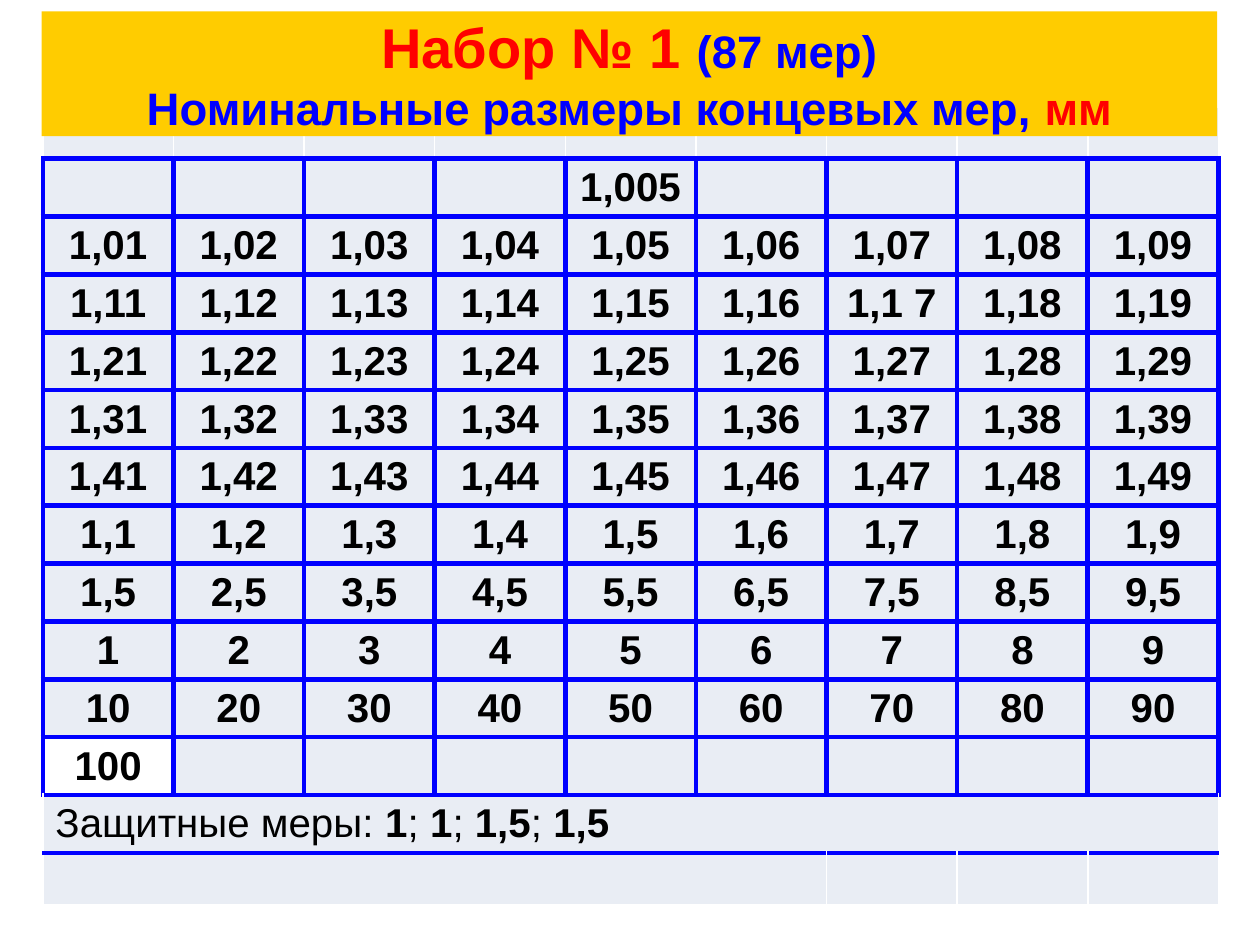
from lxml.etree import SubElement
from pptx import Presentation
from pptx.dml.color import RGBColor
from pptx.enum.text import MSO_ANCHOR, MSO_AUTO_SIZE, PP_ALIGN
from pptx.oxml.ns import qn
from pptx.util import Inches, Pt

BLUE, RED, GOLD = "0000FF", "FF0000", "FFCC00"
WHITE, BLACK, PALE = "FFFFFF", "000000", "E9EDF4"
COLS = 9


def color(code):
    return RGBColor.from_string(code)


class Board:
    face = "Arial"

    def __init__(self, slide):
        self.slide = slide

    def style(self, font, size, code, bold=True):
        font.name = self.face
        font.size = Pt(size)
        font.bold = bold
        font.color.rgb = color(code)

    def title(self, lines, box):
        shape = self.slide.shapes.title
        shape.left, shape.top, shape.width, shape.height = map(Inches, box)
        shape.fill.solid()
        shape.fill.fore_color.rgb = color(GOLD)
        frame = shape.text_frame
        frame.word_wrap = True
        frame.auto_size = MSO_AUTO_SIZE.NONE
        frame.vertical_anchor = MSO_ANCHOR.MIDDLE
        para = frame.paragraphs[0]
        para.alignment = PP_ALIGN.CENTER
        self.style(para.font, 26, BLUE)
        for index, line in enumerate(lines):
            if index:
                para.add_line_break()
            for text, size, code in line:
                run = para.add_run()
                run.text = text
                self.style(run.font, size, code)
        tree = shape.element.getparent()
        tree.append(shape.element)

    def border(self, cell, sides):
        props = cell._tc.get_or_add_tcPr()
        for side in "LRTB":
            code, width = (WHITE, 1) if side in sides else (BLUE, 3)
            line = SubElement(props, qn(f"a:ln{side}"), w=str(Pt(width)))
            fill = SubElement(line, qn("a:solidFill"))
            SubElement(fill, qn("a:srgbClr"), val=code)

    def text(self, cell, parts, align):
        cell.vertical_anchor = MSO_ANCHOR.MIDDLE
        para = cell.text_frame.paragraphs[0]
        para.alignment = align
        self.style(para.font, 23, BLACK)
        for text, bold in parts:
            run = para.add_run()
            run.text = text
            if not bold:
                run.font.bold = False

    def table(self, rows, box, high, white):
        frame = self.slide.shapes.add_table(len(rows), COLS, *map(Inches, box))
        grid = frame.table
        grid.first_row = grid.horz_banding = False
        for row, (line, values) in enumerate(zip(grid.rows, rows)):
            line.height = Inches(high)
            for cell, value in zip(line.cells, values):
                self.border(cell, white.get(row, ""))
                if value == "100":
                    cell.fill.background()
                else:
                    cell.fill.solid()
                    cell.fill.fore_color.rgb = color(PALE)
                if value:
                    self.text(cell, [(value, True)], PP_ALIGN.CENTER)
        frame.height = Inches(box[3])
        return grid


def sizes():
    span = range(1, COLS + 1)
    blank = [""] * COLS
    rows = [blank, [""] * 4 + ["1,005"] + [""] * 4]
    rows += [[f"1,{ten}{unit}" for unit in span] for ten in range(5)]
    rows[3][6] = "1,1 7"
    rows.append([f"1,{unit}" for unit in span])
    rows.append([f"{unit},5" for unit in span])
    rows.append([f"{unit}" for unit in span])
    rows.append([f"{unit}0" for unit in span])
    rows.append(["100"] + [""] * 8)
    return rows + [blank, blank]


def main():
    deck = Presentation()
    deck.slide_width, deck.slide_height = Inches(10), Inches(7.5)
    board = Board(deck.slides.add_slide(deck.slide_layouts[5]))
    white = {0: "LTR", 12: "LR", 13: "LRB"}
    grid = board.table(sizes(), (0.34, 0.85, 9.33, 6.61), 0.41, white)
    grid.cell(12, 0).merge(grid.cell(12, 8))
    grid.cell(13, 0).merge(grid.cell(13, 5))
    guard = [("Защитные меры: ", False), ("1", True), ("; ", False), ("1", True)]
    guard += [(";", False), (" 1,5", True)] * 2
    board.text(grid.cell(12, 0), guard, PP_ALIGN.LEFT)
    head = [("Набор № 1 ", 32, RED), ("(87 мер)", 26, BLUE)]
    sub = [("Номинальные размеры концевых мер, ", 26, BLUE), ("мм", 26, RED)]
    board.title([head, sub], (0.33, 0.09, 9.33, 0.99))
    deck.save("out.pptx")


if __name__ == "__main__":
    main()
